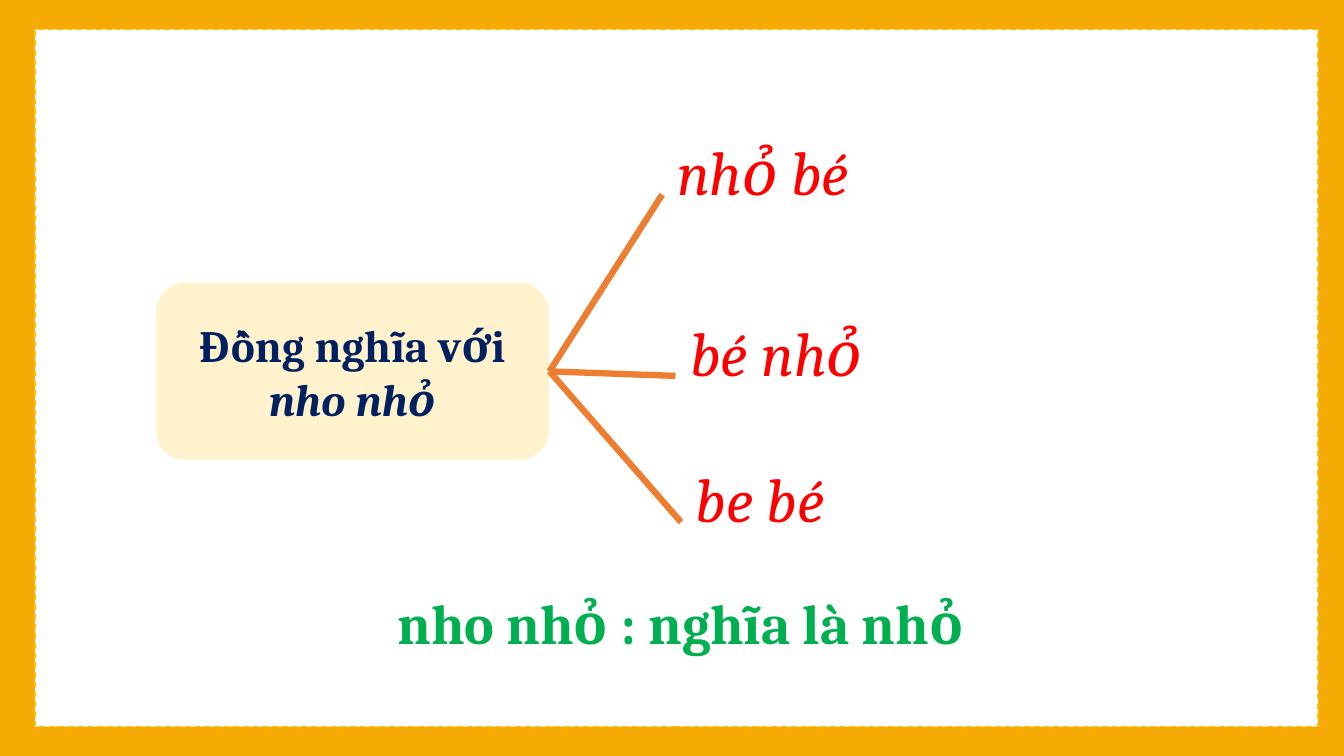
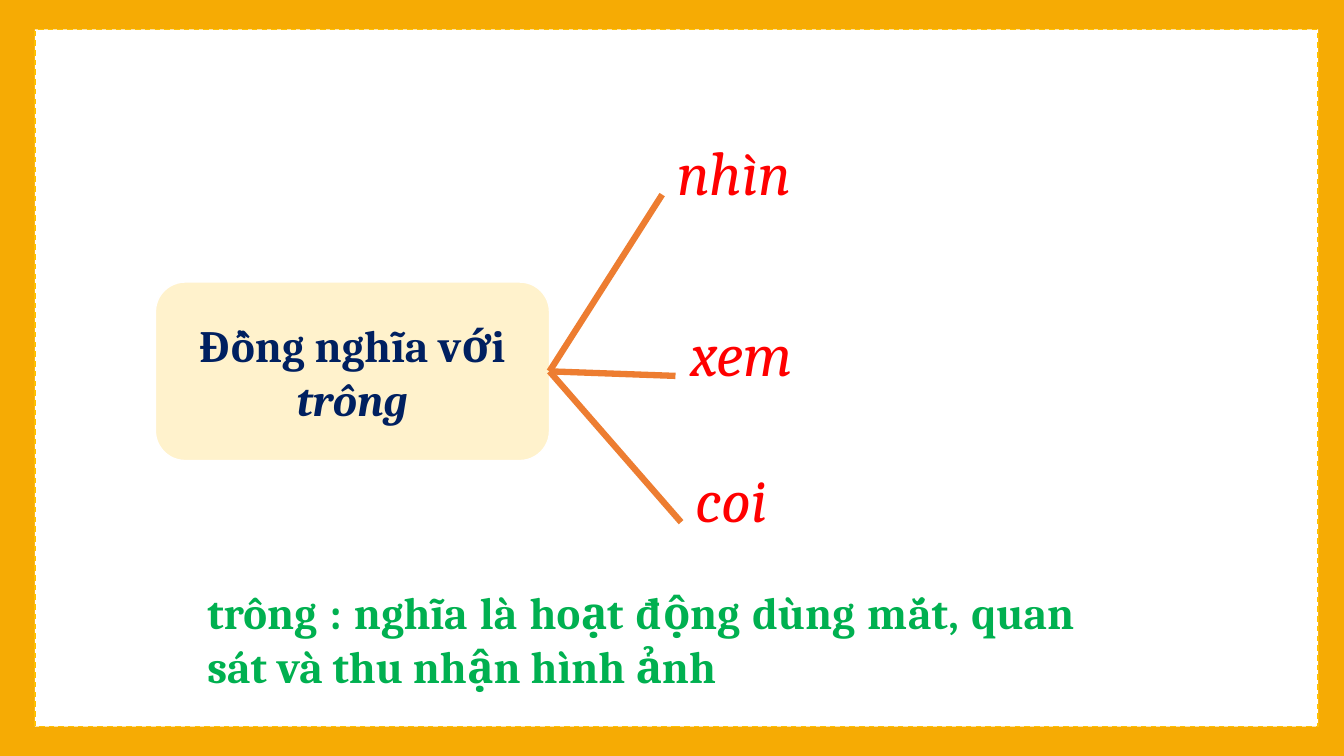
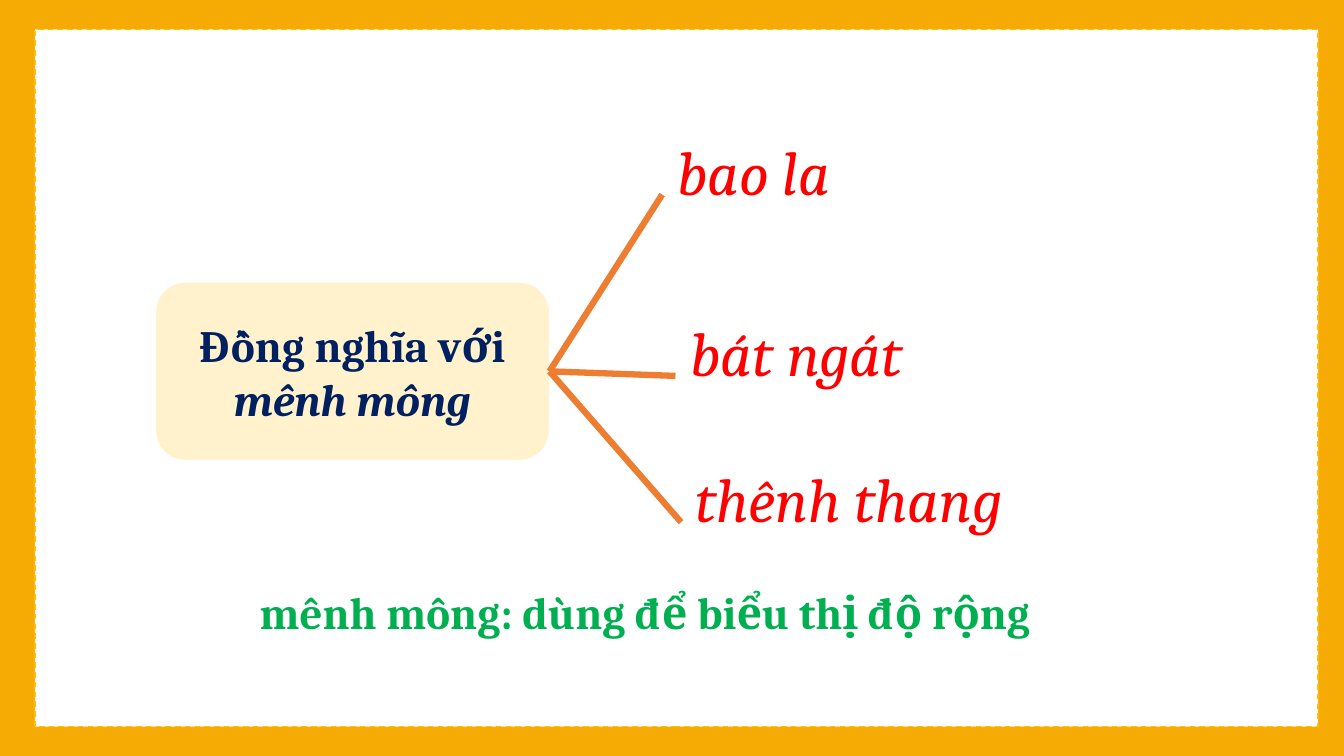
"""Build three vocabulary slides that map a word to its synonyms."""
from dataclasses import dataclass

from lxml import etree
from pptx import Presentation
from pptx.dml.color import RGBColor
from pptx.enum.dml import MSO_LINE
from pptx.enum.shapes import MSO_CONNECTOR, MSO_SHAPE
from pptx.enum.text import MSO_ANCHOR, MSO_AUTO_SIZE, PP_ALIGN
from pptx.oxml.ns import qn
from pptx.util import Pt

RECT, ROUNDED = MSO_SHAPE.RECTANGLE, MSO_SHAPE.ROUNDED_RECTANGLE
STRAIGHT, DASH = MSO_CONNECTOR.STRAIGHT, MSO_LINE.DASH
LEFT, CENTER, JUSTIFY = PP_ALIGN.LEFT, PP_ALIGN.CENTER, PP_ALIGN.JUSTIFY
MIDDLE, GROW = MSO_ANCHOR.MIDDLE, MSO_AUTO_SIZE.SHAPE_TO_FIT_TEXT


@dataclass(frozen=True)
class Theme:
    """Colours, font and type sizes of the deck."""
    font: str = "Cambria"
    border: str = "F6AB04"
    dash: str = "FFC000"
    paper: str = "FFFFFF"
    card: str = "FFF2CC"
    card_text: str = "002060"
    branch: str = "ED7D31"
    synonym: str = "FF0000"
    meaning: str = "00B050"
    body_size: float = 32
    meaning_size: float = 40
    synonym_size: float = 44


THEME = Theme()
WIDTH, HEIGHT = 960, 540
CARD = (111, 201.5, 281.5, 127.5)
BRANCH_ENDS = ((473, 139), (482.5, 268.5), (486.5, 373))
LABEL_DX, LABEL_DY, LABEL_HEIGHT = 3.5, -47, 60.5

SLIDES = (
    dict(word="nho nhỏ",
         synonyms=(("nhỏ bé", 147.5), ("bé nhỏ", 147.5), ("be bé", 147.5)),
         meaning="nho nhỏ : nghĩa là nhỏ", box=(161, 417, 650, 55.5),
         size=THEME.meaning_size, align=CENTER),
    dict(word="trông",
         synonyms=(("nhìn", 147.5), ("xem", 147.5), ("coi", 147.5)),
         meaning="trông : nghĩa là hoạt động dùng mắt, quan sát và thu nhận hình ảnh",
         box=(141, 414, 633.5, 85), size=THEME.body_size, align=JUSTIFY),
    dict(word="mênh mông",
         synonyms=(("bao la", 147.5), ("bát ngát", 194.5), ("thênh thang", 281)),
         meaning="mênh mông: dùng để biểu thị độ rộng",
         box=(144, 414, 633.5, 46), size=THEME.body_size, align=CENTER),
)


def rgb(value):
    """Turn a hex string into a colour."""
    return RGBColor.from_string(value)


def add_run(p, text, *, size, color, bold=False, italic=False):
    """Append formatted text to a paragraph."""
    r = p.add_run()
    r.text = text
    r.font.name, r.font.size = THEME.font, Pt(size)
    r.font.bold, r.font.italic = bold, italic
    r.font.color.rgb = rgb(color)


def add_panel(s, kind, box, fill, line=None, dash=None):
    """Add a filled shape with an optional outline."""
    sp = s.shapes.add_shape(kind, *map(Pt, box))
    sp.shadow.inherit = False
    sp.fill.solid()
    sp.fill.fore_color.rgb = rgb(fill)
    if line:
        sp.line.color.rgb = rgb(line)
        sp.line.width = Pt(1)
        sp.line.dash_style = dash
    else:
        sp.line.fill.background()
    return sp


def add_label(s, text, box, align=LEFT, **fmt):
    """Add a wrapped text box that grows with its text."""
    tf = s.shapes.add_textbox(*map(Pt, box)).text_frame
    tf.word_wrap = True
    tf.auto_size = GROW
    p = tf.paragraphs[0]
    p.alignment = align
    add_run(p, text, **fmt)


def add_branch(s, start, end):
    """Draw a straight branch between two points."""
    line = s.shapes.add_connector(STRAIGHT, *map(Pt, start + end))
    line.line.color.rgb = rgb(THEME.branch)
    line.line.width = Pt(4.5)
    etree.SubElement(line._element.spPr, qn("a:effectLst"))


def add_frame(s):
    """Add the border and the dashed paper area."""
    add_panel(s, RECT, (0, 0, WIDTH, HEIGHT), THEME.border)
    add_panel(s, RECT, (25, 21, 916.5, 498), THEME.paper, THEME.dash, DASH)


def add_card(s, word):
    """Add the rounded card that names the word."""
    sp = add_panel(s, ROUNDED, CARD, THEME.card, THEME.paper)
    tf = sp.text_frame
    tf.word_wrap = True
    tf.vertical_anchor = MIDDLE
    p = tf.paragraphs[0]
    p.alignment = CENTER
    fmt = dict(size=THEME.body_size, color=THEME.card_text, bold=True)
    add_run(p, "Đồng nghĩa với ", **fmt)
    add_run(p, word, italic=True, **fmt)


def add_synonyms(s, synonyms):
    """Add one branch and label for each synonym."""
    left, top, width, height = CARD
    start = (left + width, top + height / 2)
    for (text, label_width), end in zip(synonyms, BRANCH_ENDS):
        add_branch(s, start, end)
        box = (end[0] + LABEL_DX, end[1] + LABEL_DY, label_width, LABEL_HEIGHT)
        add_label(s, text, box, size=THEME.synonym_size,
                  color=THEME.synonym, italic=True)


def add_word_slide(prs, word, synonyms, meaning, box, size, align):
    """Add a slide for one word, its synonyms and its meaning."""
    s = prs.slides.add_slide(prs.slide_layouts[6])
    add_frame(s)
    add_card(s, word)
    add_synonyms(s, synonyms)
    add_label(s, meaning, box, align, size=size, color=THEME.meaning, bold=True)


def main():
    """Build and save the deck."""
    prs = Presentation()
    prs.slide_width, prs.slide_height = Pt(WIDTH), Pt(HEIGHT)
    for content in SLIDES:
        add_word_slide(prs, **content)
    prs.save("out.pptx")


if __name__ == "__main__":
    main()
